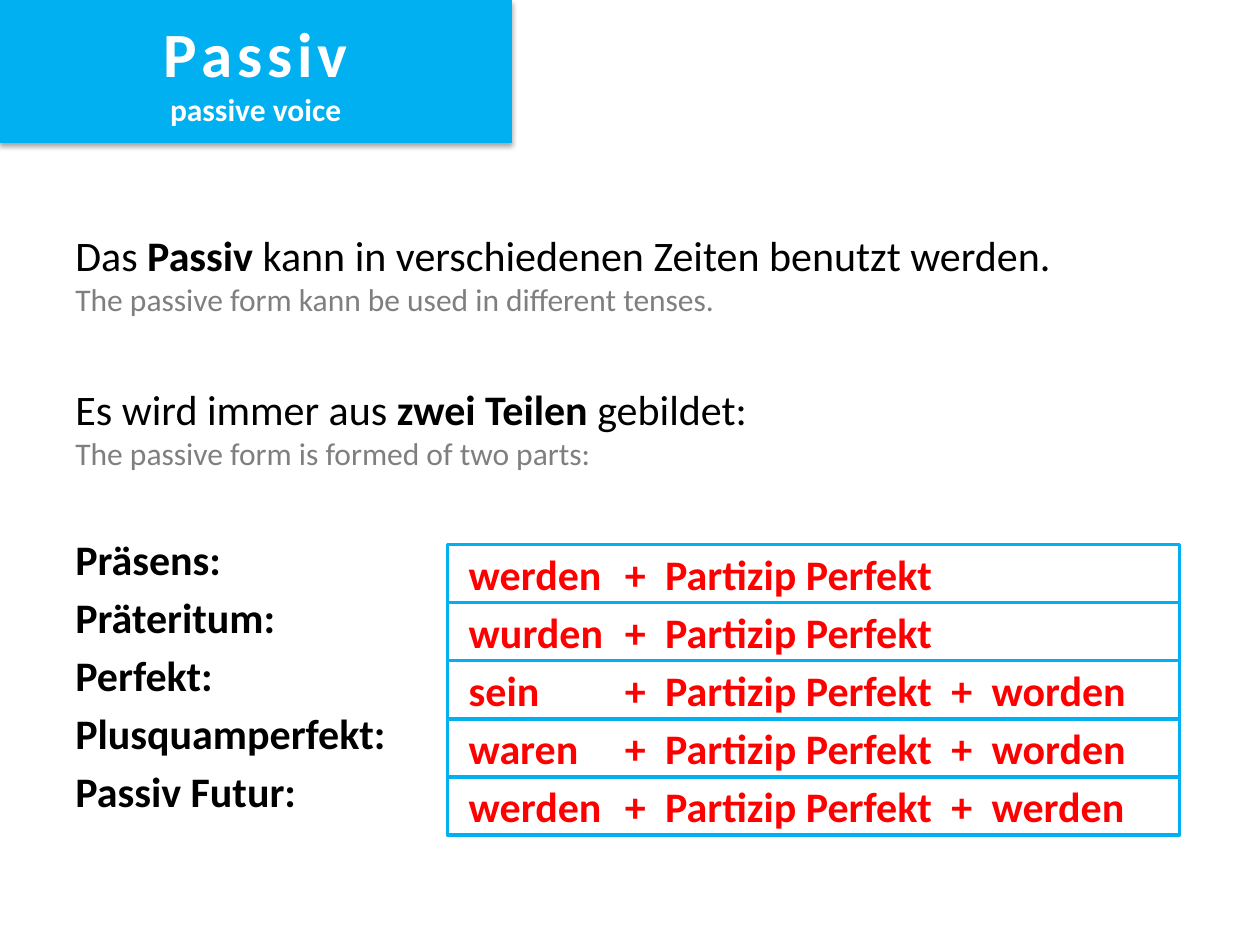
import pptx
import pptx.dml.color
import pptx.enum.shapes
import pptx.enum.text
import pptx.oxml
import pptx.oxml.ns
import pptx.util

Cm = pptx.util.Cm
Pt = pptx.util.Pt
ALIGN = pptx.enum.text.PP_ALIGN
ANCHOR = pptx.enum.text.MSO_ANCHOR
NS = pptx.oxml.ns.nsdecls("a")

BLUE, RED, GREY = "00B0F0", "FF0000", "7F7F7F"
BLACK, WHITE = "000000", "FFFFFF"


def rgb(value):
    return pptx.dml.color.RGBColor.from_string(value)


class Deck:
    font = "Calibri"
    size = 24

    def __init__(self, prs):
        self.s = prs.slides.add_slide(prs.slide_layouts[6])

    def run(self, p, text, color=BLACK, bold=False, size=None):
        r = p.add_run()
        r.text = text
        r.font.name = self.font
        r.font.size = Pt(size or self.size)
        r.font.bold = bold
        r.font.color.rgb = rgb(color)

    def frame(self, sp, anchor):
        tf = sp.text_frame
        tf.word_wrap = True
        tf.vertical_anchor = anchor
        return tf

    def textbox(self, x, y, w, h):
        sp = self.s.shapes.add_textbox(Cm(x), Cm(y), Cm(w), Cm(h))
        return self.frame(sp, ANCHOR.TOP)

    def rect(self, x, y, w, h, fill, line_width):
        sp = self.s.shapes.add_shape(
            pptx.enum.shapes.MSO_SHAPE.RECTANGLE, Cm(x), Cm(y), Cm(w), Cm(h))
        sp.shadow.inherit = False
        sp.fill.solid()
        sp.fill.fore_color.rgb = rgb(fill)
        sp.line.color.rgb = rgb(BLUE)
        sp.line.width = Pt(line_width)
        return sp

    def statement(self, p, parts, translation):
        for i, part in enumerate(parts):
            self.run(p, part, bold=i == 1)
        p.add_line_break()
        self.run(p, translation, GREY, size=18)

    def formula(self, x, y, w, h, parts, tabs):
        sp = self.rect(x, y, w, h, WHITE, 2)
        tf = self.frame(sp, ANCHOR.MIDDLE)
        tf.margin_left = Cm(0.43)
        p = tf.paragraphs[0]
        p.alignment = ALIGN.LEFT
        stops = "".join(f'<a:tab pos="{Cm(t)}" algn="l"/>' for t in tabs)
        p._p.get_or_add_pPr().append(
            pptx.oxml.parse_xml(f"<a:tabLst {NS}>{stops}</a:tabLst>"))
        self.run(p, "\t+\t".join(parts), RED, bold=True)

    def banner(self, x, y, w, h, title, subtitle):
        sp = self.rect(x, y, w, h, BLUE, 0.75)
        effects = sp._element.spPr.find(pptx.oxml.ns.qn("a:effectLst"))
        effects.append(pptx.oxml.parse_xml(
            f'<a:outerShdw {NS} blurRad="{Pt(3.1)}" dist="{Pt(1.8)}" '
            'dir="5400000" rotWithShape="0"><a:srgbClr val="000000">'
            '<a:alpha val="35000"/></a:srgbClr></a:outerShdw>'))
        p = self.frame(sp, ANCHOR.MIDDLE).paragraphs[0]
        p.alignment = ALIGN.CENTER
        for i, letter in enumerate(title):
            if i:
                self.run(p, " ", WHITE, True, 12)
            self.run(p, letter, WHITE, True, 36)
        p.add_line_break()
        self.run(p, subtitle, WHITE, True, 18)


def main():
    prs = pptx.Presentation()
    prs.slide_width, prs.slide_height = Cm(25.4), Cm(19.05)
    deck = Deck(prs)

    statements = [
        (("Das ", "Passiv ", "kann in verschiedenen Zeiten benutzt werden."),
         "The passive form kann be used in different tenses.", 0),
        (("Es wird immer aus ", "zwei Teilen ", "gebildet:"),
         "The passive form is formed of two parts:", 37.9),
    ]
    tenses = [
        ("Präsens:", ("werden", "Partizip Perfekt")),
        ("Präteritum:", ("wurden", "Partizip Perfekt")),
        ("Perfekt:", ("sein", "Partizip Perfekt", "worden")),
        ("Plusquamperfekt:", ("waren", "Partizip Perfekt", "worden")),
        ("Passiv Futur:", ("werden", "Partizip Perfekt", "werden")),
    ]

    tf = deck.textbox(1.27, 4.5, 22.71, 13.06)
    for i, (parts, translation, gap) in enumerate(statements):
        p = tf.add_paragraph() if i else tf.paragraphs[0]
        p.space_before = Pt(gap)
        deck.statement(p, parts, translation)
    for i, (tense, parts) in enumerate(tenses):
        p = tf.add_paragraph()
        p.space_before = Pt(4.3 if i else 35)
        deck.run(p, tense, bold=True)
        deck.formula(9.02, 10.98 + i * 1.17, 14.76, 1.17, parts,
                     (3.15, 3.96, 9.73, 10.54))

    deck.banner(0, 0, 10.31, 2.87, "Passiv", "passive voice")
    prs.save("out.pptx")


if __name__ == "__main__":
    main()
